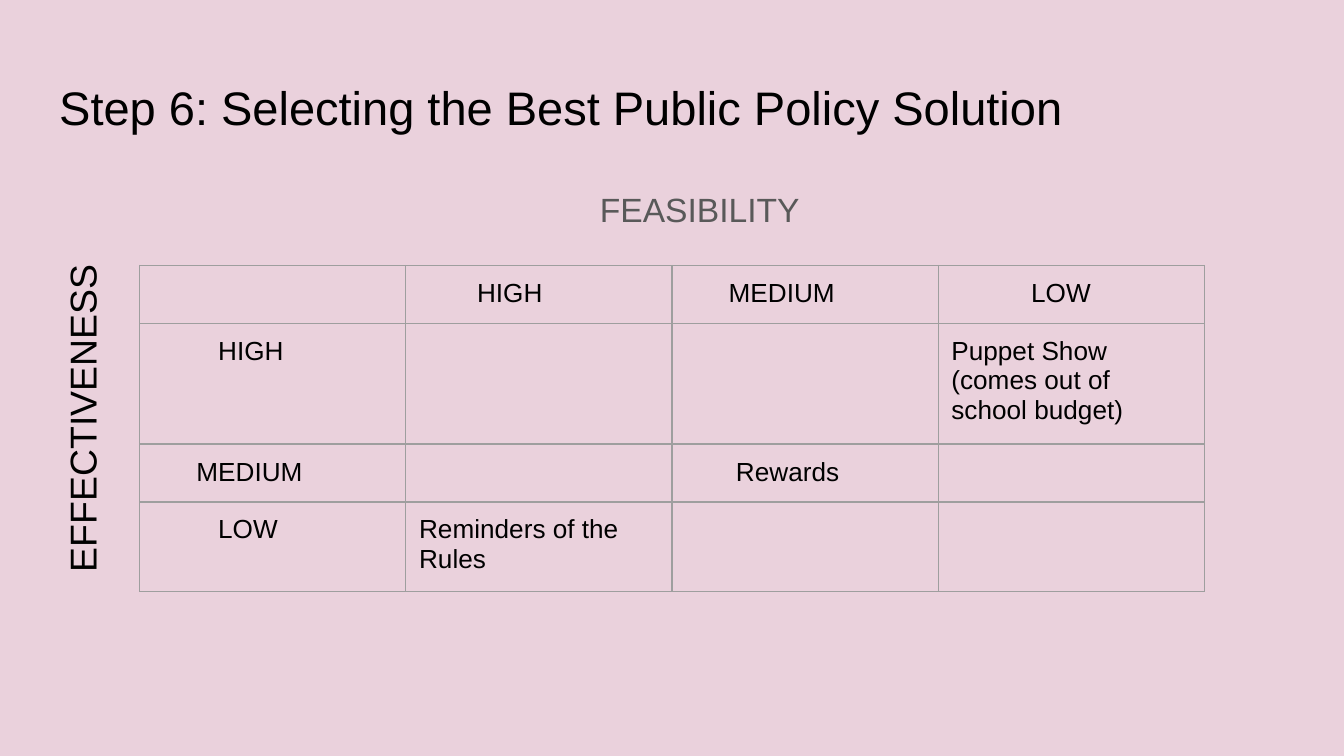
from lxml import etree
from pptx import Presentation
from pptx import util as u
from pptx.dml.color import RGBColor
from pptx.enum import text
from pptx.oxml import ns

FONT = "Arial"
INSET = 0.25
SPACE = 0.137
HEADERS = [("", 0), ("HIGH", 8), ("MEDIUM", 6), ("LOW", 11)]
ROWS = [
    (1.08, HEADERS),
    (2.16, [("HIGH", 9), ("", 0), ("", 0), ("Puppet Show (comes out of school budget)", 0)]),
    (1.08, [("MEDIUM", 6), ("", 0), ("Rewards", 7), ("", 0)]),
    (1.6, [("LOW", 9), ("Reminders of the Rules", 0), ("", 0), ("", 0)]),
]


def rgb(value):
    """Turn a hex string into a colour."""
    return RGBColor.from_string(value)


def write(tf, content, size, color="000000", indent=0):
    """Write one left-aligned paragraph, indented by a length in cm."""
    p = tf.paragraphs[0]
    p.text = content
    p.alignment = text.PP_ALIGN.LEFT
    p.font.name, p.font.size, p.font.bold = FONT, u.Pt(size), False
    p.font.color.rgb = rgb(color)
    if indent:
        p._p.get_or_add_pPr().set("marL", str(u.Cm(indent)))
    if not content:
        etree.SubElement(p._p, ns.qn("a:endParaRPr"), sz=str(size * 100))
    return p


def add_label(s, box, content, size, color="000000", indent=0):
    """Add a text box with even insets and return its shape."""
    sp = s.shapes.add_textbox(*map(u.Cm, box))
    tf = sp.text_frame
    tf.word_wrap = True
    tf.margin_left = tf.margin_right = tf.margin_top = tf.margin_bottom = u.Cm(INSET)
    write(tf, content, size, color, indent)
    return sp


def add_vertical_label(s, box, content, size):
    """Add a label that reads from bottom to top."""
    tf = add_label(s, box, content, size).text_frame
    tf.word_wrap = False
    tf._txBody.bodyPr.set("vert", "vert270")


def outline(cell, color, width):
    """Draw all four borders of a cell."""
    tc_pr = cell._tc.get_or_add_tcPr()
    for side in ("lnL", "lnR", "lnT", "lnB"):
        ln = etree.SubElement(tc_pr, ns.qn(f"a:{side}"), w=str(u.Pt(width)))
        fill = etree.SubElement(ln, ns.qn("a:solidFill"))
        etree.SubElement(fill, ns.qn("a:srgbClr"), val=color)


def add_matrix(s, box):
    """Add the feasibility and effectiveness table inside a box."""
    table = s.shapes.add_table(len(ROWS), len(HEADERS), *map(u.Cm, box)).table
    table.first_row = table.horz_banding = False
    for column in table.columns:
        column.width = u.Cm(box[2] / len(HEADERS))
    for row, (height, entries) in zip(table.rows, ROWS):
        row.height = u.Cm(height)
        for cell, (content, spaces) in zip(row.cells, entries):
            cell.margin_left = cell.margin_right = u.Cm(INSET)
            cell.margin_top = cell.margin_bottom = u.Cm(INSET)
            outline(cell, "9E9E9E", 0.75)
            cell.fill.background()
            write(cell.text_frame, content, 14, indent=spaces * SPACE)


def build_slide(prs):
    """Build the policy selection slide."""
    s = prs.slides.add_slide(prs.slide_layouts[6])
    s.background.fill.solid()
    s.background.fill.fore_color.rgb = rgb("EAD1DC")
    add_label(s, (0.87, 1.24, 23.67, 1.6), "Step 6: Selecting the Best Public Policy Solution", 25.2)
    heading = add_label(s, (0.87, 3.2, 23.67, 1.4), "FEASIBILITY", 18, "595959", 10.22)
    heading.text_frame.paragraphs[0].line_spacing = 1.15
    add_matrix(s, (2.64, 5.02, 20.12, sum(height for height, _ in ROWS)))
    add_vertical_label(s, (0.87, 4.95, 1.37, 6.12), "EFFECTIVENESS", 20)


def main():
    """Create and save the presentation."""
    prs = Presentation()
    prs.slide_width, prs.slide_height = u.Cm(25.4), u.Cm(14.29)
    build_slide(prs)
    prs.save("out.pptx")


if __name__ == "__main__":
    main()
